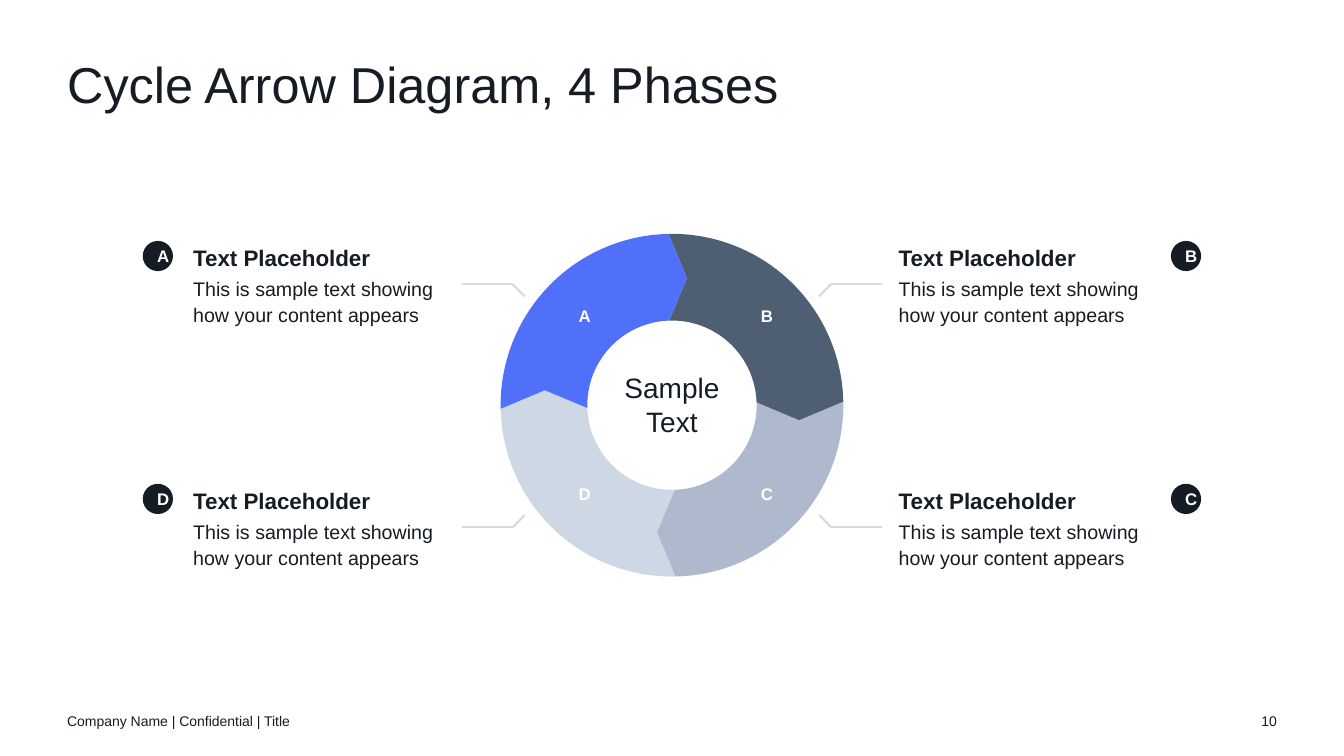
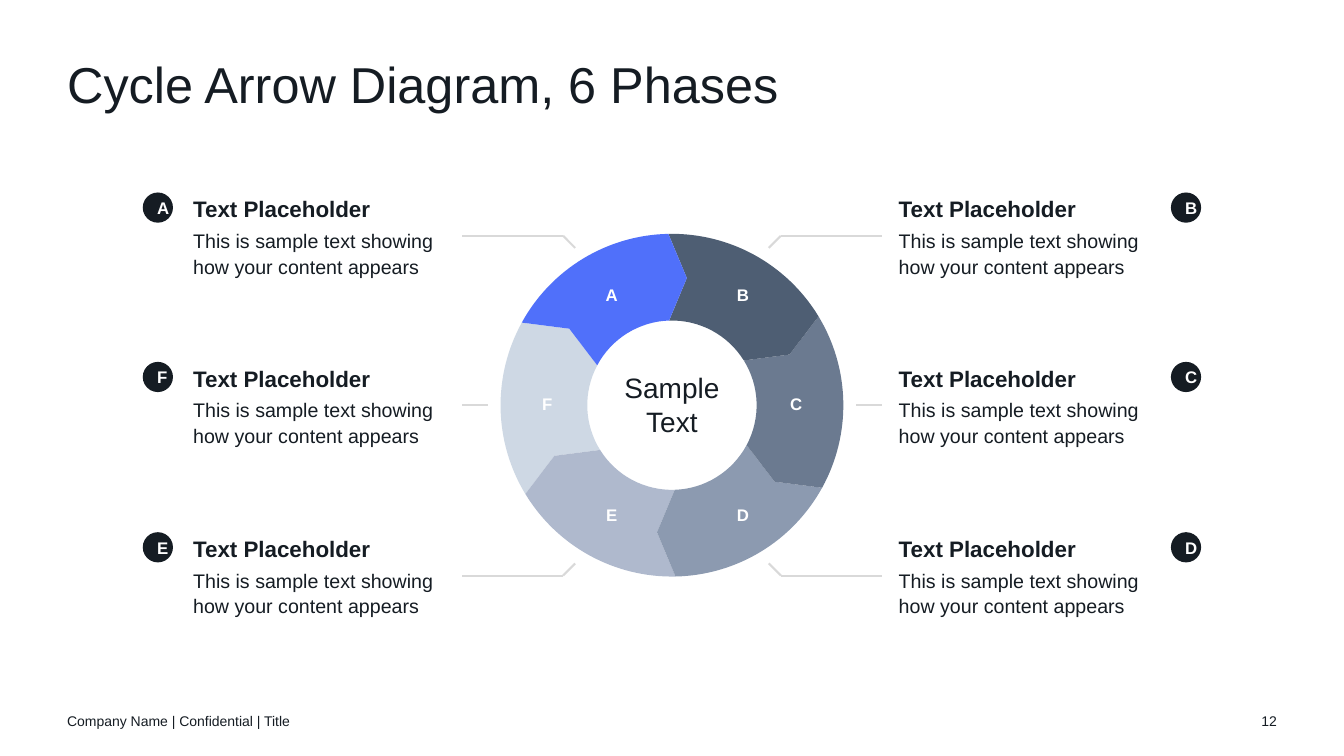
from math import cos, radians, sin, tan

from lxml import etree
from pptx import Presentation
from pptx.dml.color import RGBColor
from pptx.enum.shapes import MSO_CONNECTOR, MSO_SHAPE
from pptx.enum.text import MSO_ANCHOR, MSO_AUTO_SIZE, PP_ALIGN
from pptx.oxml.ns import qn
from pptx.util import Inches, Pt

LEFT, CENTER, RIGHT = PP_ALIGN.LEFT, PP_ALIGN.CENTER, PP_ALIGN.RIGHT
TOP, MIDDLE = MSO_ANCHOR.TOP, MSO_ANCHOR.MIDDLE
GROW = MSO_AUTO_SIZE.SHAPE_TO_FIT_TEXT
ELLIPSE = MSO_SHAPE.OVAL
STRAIGHT = MSO_CONNECTOR.STRAIGHT

INK = RGBColor(0x15, 0x1C, 0x23)
WHITE = RGBColor(0xFF, 0xFF, 0xFF)
LEADER_GREY = RGBColor(0xD9, 0xD9, 0xD9)
BLUE = RGBColor(0x50, 0x70, 0xFA)
SLATE = RGBColor(0x4E, 0x5E, 0x73)
STEEL = RGBColor(0x6B, 0x7A, 0x90)
MIST = RGBColor(0x8C, 0x9A, 0xB0)
HAZE = RGBColor(0xAF, 0xB9, 0xCD)
PALE = RGBColor(0xCE, 0xD8, 0xE4)

FONT = "Arial"
FOOTER = "Company Name | Confidential | Title"
HEADING = "Text Placeholder"
BODY = "This is sample text showing how your content appears"

SLIDE_W, SLIDE_H = 40 / 3, 7.5
MARGIN = 2 / 3

# Ring geometry: inches and degrees
CX, CY = SLIDE_W / 2, 4.02
OUTER, MID, INNER = 1.7, 1.27, 0.84
OUTER_SHIFT, TIP_SHIFT, INNER_SHIFT = -1.2, 6.7, -1.9
ARC_PIECES = 2

# Callout geometry
LEADER_START, LEADER_BEND, LEADER_DROP = 2.08, 0.12, 0.43
BADGE = 0.3
CALLOUT_W, CALLOUT_H = 2.5, 0.85
TEXT_X = {-1: CX - 4.75, 1: CX + 2.25}
BADGE_X = {-1: CX - 5.25, 1: CX + 4.95}


def style(p, size, color=INK, bold=False, align=LEFT):
    p.alignment = align
    for r in p.runs:
        r.font.name = FONT
        r.font.size = Pt(size)
        r.font.bold = bold
        r.font.color.rgb = color


def add_text(s, x, y, w, h, lines, size, anchor=MIDDLE, **look):
    box = s.shapes.add_textbox(Inches(x), Inches(y), Inches(w), Inches(h))
    tf = box.text_frame
    tf.word_wrap = True
    tf.margin_left = tf.margin_right = tf.margin_top = tf.margin_bottom = 0
    tf.vertical_anchor = anchor
    tf.text = lines
    for p in tf.paragraphs:
        style(p, size, **look)
    return tf


def add_frame(s, title, number):
    """Title, footer and page number."""
    tf = add_text(s, MARGIN, 0.6, 12, 0.6, title, 36, anchor=TOP)
    tf.paragraphs[0].line_spacing = 0.9
    add_text(s, MARGIN, 6.95, 4.5, 0.4, FOOTER, 10)
    add_text(s, SLIDE_W - MARGIN - 0.5, 6.95, 0.5, 0.4, str(number), 10,
             align=RIGHT)


def polar(radius, angle):
    """Point on the ring; angles run clockwise from the top."""
    a = radians(angle)
    return CX + radius * sin(a), CY - radius * cos(a)


def arc(radius, start, end):
    """Points after the first of a Bezier arc, three to each curve."""
    step = (end - start) / ARC_PIECES
    handle = 4 / 3 * tan(radians(step) / 4) * radius
    points = []
    for i in range(ARC_PIECES):
        a, b = start + i * step, start + (i + 1) * step
        (ax, ay), (bx, by) = polar(radius, a), polar(radius, b)
        ra, rb = radians(a), radians(b)
        points += [(ax + handle * cos(ra), ay + handle * sin(ra)),
                   (bx - handle * cos(rb), by - handle * sin(rb)),
                   (bx, by)]
    return points


def curve_lines(shape, first):
    """Turn the line segments from index first into Bezier curves."""
    lines = list(shape._element.iter(qn("a:lnTo")))
    for i in range(first, first + 3 * ARC_PIECES, 3):
        curve = etree.Element(qn("a:cubicBezTo"))
        lines[i].addprevious(curve)
        for line in lines[i:i + 3]:
            curve.append(line[0])
            line.getparent().remove(line)


def add_arrow(s, start, end, color):
    """Ring segment with a notch at its start and a point at its end."""
    inner_end = end + INNER_SHIFT
    points = arc(OUTER, start + OUTER_SHIFT, end + OUTER_SHIFT)
    points += [polar(MID, end + TIP_SHIFT), polar(INNER, inner_end)]
    inner_first = len(points)
    points += arc(INNER, inner_end, start + INNER_SHIFT)
    points.append(polar(MID, start + TIP_SHIFT))
    x, y = polar(OUTER, start + OUTER_SHIFT)
    builder = s.shapes.build_freeform(Inches(x), Inches(y))
    builder.add_line_segments([(Inches(px), Inches(py)) for px, py in points])
    shape = builder.convert_to_shape()
    curve_lines(shape, inner_first)
    curve_lines(shape, 0)
    shape.shadow.inherit = False
    shape.fill.solid()
    shape.fill.fore_color.rgb = color
    shape.line.fill.background()


def add_ring(s, colors):
    sweep = 360 / len(colors)
    for i in reversed(range(len(colors))):
        add_arrow(s, (i - 1) * sweep, i * sweep, colors[i])
    add_text(s, CX - 0.6, CY - 0.61, 1.2, 1.2, "Sample Text", 20, align=CENTER)


def add_ring_label(s, x, y, text):
    add_text(s, x, y, 0.3, 0.3, text, 12, color=WHITE, bold=True, align=CENTER)


def add_line(s, x1, y1, x2, y2):
    line = s.shapes.add_connector(
        STRAIGHT, Inches(x1), Inches(y1), Inches(x2), Inches(y2))
    etree.SubElement(line._element.spPr, qn("a:effectLst"))
    line.line.color.rgb = LEADER_GREY
    line.line.width = Pt(1.5)


def add_leader(s, side, y, length):
    """Line from the callout to the ring, bent towards it off the centre row."""
    start, end = CX + side * LEADER_START, CX + side * (LEADER_START - length)
    add_line(s, start, y, end, y)
    offset = round(CY - y, 2)
    if offset:
        bend = LEADER_BEND if offset > 0 else -LEADER_BEND
        add_line(s, end, y, end - side * LEADER_BEND, y + bend)


def add_badge(s, x, y, text):
    badge = s.shapes.add_shape(ELLIPSE, Inches(x), Inches(y),
                               Inches(BADGE), Inches(BADGE))
    badge.shadow.inherit = False
    badge.fill.solid()
    badge.fill.fore_color.rgb = INK
    badge.line.fill.background()
    tf = badge.text_frame
    tf.vertical_anchor = MIDDLE
    tf.text = text
    style(tf.paragraphs[0], 12, WHITE, bold=True, align=CENTER)


def add_callout(s, side, top, length, text):
    add_leader(s, side, top + LEADER_DROP, length)
    tf = add_text(s, TEXT_X[side], top, CALLOUT_W, CALLOUT_H,
                  f"{HEADING}\n{BODY}", 14)
    tf.auto_size = GROW
    for p in tf.paragraphs:
        p.line_spacing = 1.1
        p.space_after = Pt(3)
    style(tf.paragraphs[0], 16, bold=True)
    add_badge(s, BADGE_X[side], top, text)


def add_cycle_slide(prs, number, colors, rows):
    """rows, top down: callout top, leader length, ring label left, right, top."""
    count = len(colors)
    s = prs.slides.add_slide(prs.slide_layouts[6])
    add_frame(s, f"Cycle Arrow Diagram, {count} Phases", number)
    add_ring(s, colors)
    for row, (top, length, label_left, label_right, label_top) in enumerate(rows):
        for side, x, i in ((-1, label_left, -row % count),
                           (1, label_right, row + 1)):
            text = chr(ord("A") + i)
            add_ring_label(s, x, label_top, text)
            add_callout(s, side, top, length, text)


def main():
    prs = Presentation()
    prs.slide_width, prs.slide_height = Inches(SLIDE_W), Inches(SLIDE_H)
    add_cycle_slide(prs, 10, [BLUE, SLATE, HAZE, PALE],
                    [(2.39, 0.5, 5.65, 7.46, 2.98),
                     (4.8, 0.5, 5.65, 7.46, 4.75)])
    add_cycle_slide(prs, 12, [BLUE, SLATE, STEEL, MIST, HAZE, PALE],
                    [(1.91, 1, 5.92, 7.22, 2.77),
                     (3.59, 0.25, 5.28, 7.75, 3.86),
                     (5.28, 1, 5.92, 7.22, 4.96)])
    prs.save("out.pptx")


if __name__ == "__main__":
    main()
